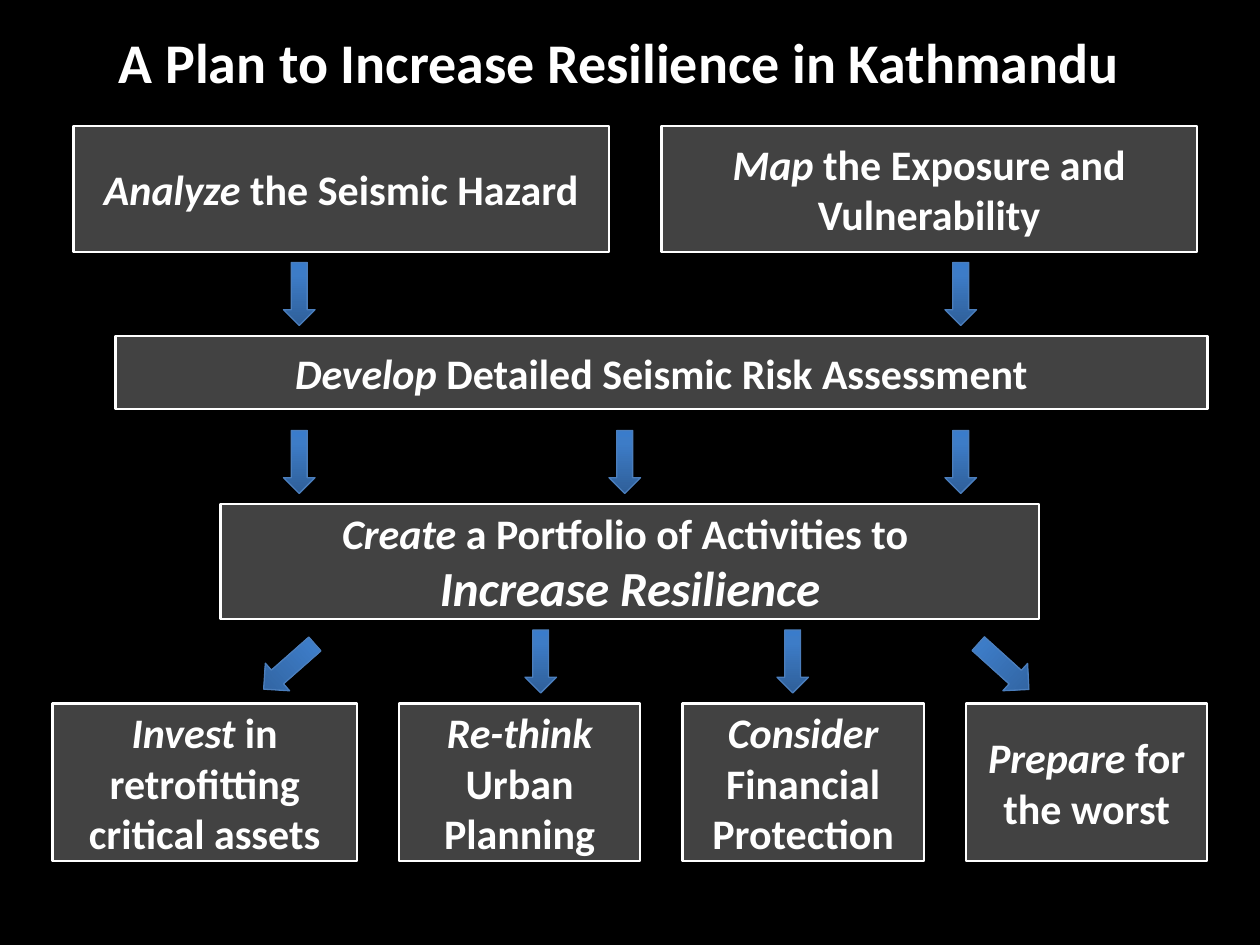
from lxml.etree import SubElement
from pptx import Presentation
from pptx.dml.color import RGBColor
from pptx.enum.shapes import MSO_SHAPE as Preset
from pptx.enum.text import MSO_ANCHOR as Anchor, MSO_AUTO_SIZE as AutoSize, PP_ALIGN as Align
from pptx.oxml.ns import qn
from pptx.util import Pt

BLACK = RGBColor(0x00, 0x00, 0x00)
WHITE = RGBColor(0xFF, 0xFF, 0xFF)
BOX_GRAY = RGBColor(0xBF, 0xBF, 0xBF)
ARROW_EDGE = RGBColor(0x4B, 0x7E, 0xBC)
ARROW_STOPS = [
    (0, RGBColor(0x2F, 0x5F, 0x99)),
    (80, RGBColor(0x3D, 0x7C, 0xC7)),
    (100, RGBColor(0x3A, 0x7C, 0xCB)),
]
BOLD_TEXT = {"name": "Calibri", "bold": True}
BOX_FRAME = {"word_wrap": True, "vertical_anchor": Anchor.MIDDLE}
TITLE_FRAME = {"word_wrap": True, "vertical_anchor": Anchor.TOP,
               "auto_size": AutoSize.SHAPE_TO_FIT_TEXT}

# Each run is (text, size, italic); each box is (left, top, width, height, paragraphs).
STEPS = [
    (42, 72, 306, 72, [[("Analyze", 24, True), (" the Seismic Hazard", 24, False)]]),
    (378, 72, 306, 72, [[("Map", 24, True), (" the Exposure and Vulnerability", 24, False)]]),
    (66, 192, 624, 42, [[("Develop ", 24, True),
                         ("Detailed Seismic Risk Assessment", 24, False)]]),
    (126, 288, 468, 66, [[("Create", 24, True), (" a Portfolio of Activities to ", 24, False)],
                         [("Increase Resilience", 28, True)]]),
]
ACTIVITIES = [
    (174, "Invest ", "in retrofitting critical assets"),
    (138, "Re-think ", "Urban Planning"),
    (138, "Consider", " Financial Protection"),
    (138, "Prepare ", "for the worst"),
]
ACTIVITY_LEFT, ACTIVITY_TOP, ACTIVITY_HEIGHT, ACTIVITY_GAP = 30, 402, 90, 24

# Arrow rows: top -> left edges
ARROW_ROWS = {150: [162, 540], 246: [162, 348, 540], 360: [300, 444]}
SLANTED_ARROWS = [(154.8, 48.6), (563, 312.1)]


def apply_formats(target, formats):
    for name, value in formats.items():
        setattr(target, name, value)


def write_runs(paragraph, runs):
    paragraph.alignment = Align.CENTER
    for text, size, italic in runs:
        run = paragraph.add_run()
        run.text = text
        apply_formats(run.font, {**BOLD_TEXT, "size": Pt(size), "italic": italic})
        run.font.color.rgb = WHITE


def add_preset(slide, preset, bounds, edge_color, edge_width):
    shape = slide.shapes.add_shape(preset, *map(Pt, bounds))
    shape.shadow.inherit = False
    shape.line.color.rgb = edge_color
    shape.line.width = Pt(edge_width)
    return shape


def add_box(slide, left, top, width, height, paragraphs):
    box = add_preset(slide, Preset.RECTANGLE, (left, top, width, height), WHITE, 1.25)
    box.fill.solid()
    box.fill.fore_color.rgb = BOX_GRAY
    fill_color = box._element.spPr.find(f"{qn('a:solidFill')}/{qn('a:srgbClr')}")
    SubElement(fill_color, qn("a:alpha"), val="35000")
    frame = box.text_frame
    apply_formats(frame, BOX_FRAME)
    for index, runs in enumerate(paragraphs):
        write_runs(frame.add_paragraph() if index else frame.paragraphs[0], runs)


def add_arrow(slide, left, top, width=18, height=36, rotation=0):
    arrow = add_preset(slide, Preset.DOWN_ARROW, (left, top, width, height), ARROW_EDGE, 0.75)
    arrow.rotation = rotation
    arrow.fill.gradient()
    arrow.fill.gradient_angle = 90
    properties = arrow._element.spPr
    stops = properties.find(f"{qn('a:gradFill')}/{qn('a:gsLst')}")
    stops.clear()
    for position, color in ARROW_STOPS:
        stop = SubElement(stops, qn("a:gs"), pos=str(position * 1000))
        SubElement(stop, qn("a:srgbClr"), val=str(color))
    shadow = SubElement(properties.find(qn("a:effectLst")), qn("a:outerShdw"),
                        blurRad=str(Pt(3.1)), dist=str(Pt(1.8)), dir="5400000",
                        rotWithShape="0")
    shadow_color = SubElement(shadow, qn("a:srgbClr"), val=str(BLACK))
    SubElement(shadow_color, qn("a:alpha"), val="35000")


def add_title(slide, text):
    title = slide.shapes.title
    apply_formats(title, {"left": Pt(36), "top": Pt(12), "width": Pt(636), "height": Pt(46)})
    apply_formats(title.text_frame, TITLE_FRAME)
    write_runs(title.text_frame.paragraphs[0], [(text, 32, False)])


def add_activities(slide):
    left = ACTIVITY_LEFT
    for width, verb, rest in ACTIVITIES:
        add_box(slide, left, ACTIVITY_TOP, width, ACTIVITY_HEIGHT,
                [[(verb, 24, True), (rest, 24, False)]])
        left += width + ACTIVITY_GAP


def add_arrows(slide):
    for top, lefts in ARROW_ROWS.items():
        for left in lefts:
            add_arrow(slide, left, top)
    for left, rotation in SLANTED_ARROWS:
        add_arrow(slide, left, 361.4, 21, 39, rotation)


def main():
    deck = Presentation()
    deck.slide_width, deck.slide_height = Pt(720), Pt(540)
    slide = deck.slides.add_slide(deck.slide_layouts[5])
    slide.background.fill.solid()
    slide.background.fill.fore_color.rgb = BLACK
    add_title(slide, "A Plan to Increase Resilience in Kathmandu")
    for step in STEPS:
        add_box(slide, *step)
    add_activities(slide)
    add_arrows(slide)
    deck.save("out.pptx")


if __name__ == "__main__":
    main()
